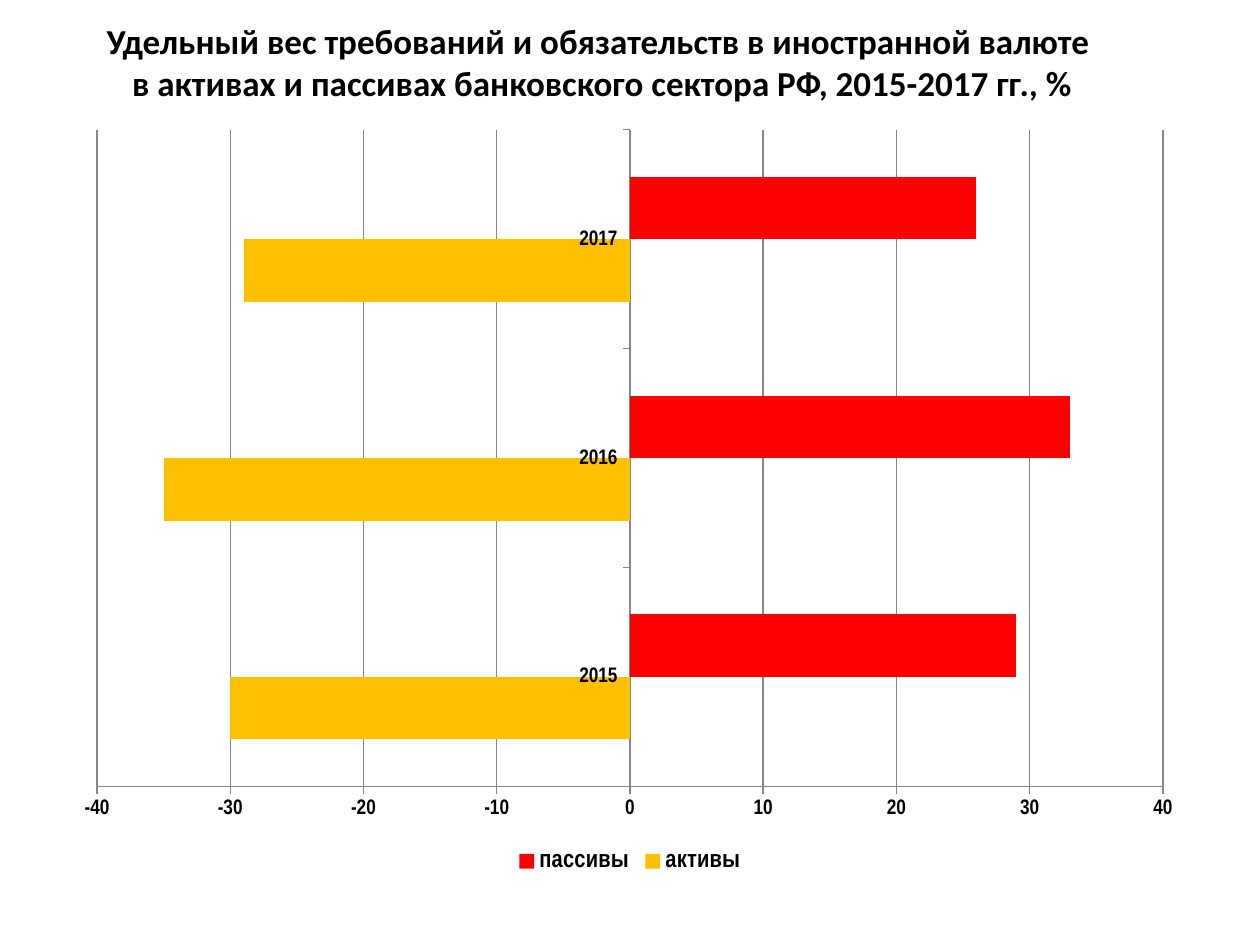
from lxml import etree
from pptx import Presentation
from pptx.chart.data import CategoryChartData
from pptx.dml.color import RGBColor
from pptx.enum import chart as ec, text
from pptx.oxml import ns
from pptx.util import Inches, Pt

BLACK = RGBColor(0x00, 0x00, 0x00)
GRAY = RGBColor(0x86, 0x86, 0x86)
GOLD = RGBColor(0xFF, 0xC0, 0x00)
RED = RGBColor(0xFF, 0x00, 0x00)


def style(font, name, size, bold=True):
    form = {"name": name, "size": Pt(size), "bold": bold}
    for key, val in form.items():
        setattr(font, key, val)
    font.color.rgb = BLACK


deck = Presentation()
deck.slide_width, deck.slide_height = Inches(10), Inches(7.5)
slide = deck.slides.add_slide(deck.slide_layouts[6])

# Title
box = slide.shapes.add_textbox(Inches(0.28), Inches(0.13), Inches(9), Inches(0.71))
frame = box.text_frame
frame.word_wrap = True
frame.vertical_anchor = text.MSO_ANCHOR.MIDDLE
para = frame.paragraphs[0]
para.alignment = text.PP_ALIGN.CENTER
para.text = ("Удельный вес требований и обязательств в иностранной валюте \v"
             "в активах и пассивах банковского сектора РФ, 2015-2017 гг., %")
for run in para.runs:
    style(run.font, "Calibri", 20)

# Chart: assets to the left of zero, liabilities to the right
data = CategoryChartData()
data.categories = ["2015", "2016", "2017"]
data.add_series("активы", (-30, -35, -29))
data.add_series("пассивы", (29, 33, 26))
chart = slide.shapes.add_chart(
    ec.XL_CHART_TYPE.BAR_CLUSTERED,
    Inches(0.5), Inches(0.91), Inches(9), Inches(6.06), data).chart
chart.has_title = False
style(chart.font, "Calibri", 10, False)

# Bars
plot = chart.plots[0]
plot.gap_width = 150
plot.vary_by_categories = False
for bar, color in zip(plot.series, (GOLD, RED)):
    bar.invert_if_negative = False
    bar.format.fill.solid()
    bar.format.fill.fore_color.rgb = color

# Axes and grid
years, scale = chart.category_axis, chart.value_axis
for axis in (years, scale):
    axis.major_tick_mark = ec.XL_TICK_MARK.OUTSIDE
    axis.format.line.color.rgb = GRAY
    style(axis.tick_labels.font, "Arial Narrow", 12)
limits = {"minimum_scale": -40, "maximum_scale": 40, "major_unit": 10}
for key, val in limits.items():
    setattr(scale, key, val)
years.has_major_gridlines = False
scale.has_major_gridlines = True
scale.major_gridlines.format.line.color.rgb = GRAY

# Legend
chart.has_legend = True
chart.legend.position = ec.XL_LEGEND_POSITION.BOTTOM
chart.legend.include_in_layout = False
style(chart.legend.font, "Arial Narrow", 14)

# Inner plot area, as shares of the chart frame
area = plot._element.getparent()
for old in area.findall(ns.qn("c:layout")):
    area.remove(old)
layout = etree.Element(ns.qn("c:layout"))
area.insert(0, layout)
manual = etree.SubElement(layout, ns.qn("c:manualLayout"))
shares = {"layoutTarget": "inner", "xMode": "edge", "yMode": "edge",
          "x": 0.03, "y": 0.02, "w": 0.94, "h": 0.86}
for key, val in shares.items():
    etree.SubElement(manual, ns.qn("c:" + key)).set("val", str(val))

deck.save("out.pptx")
